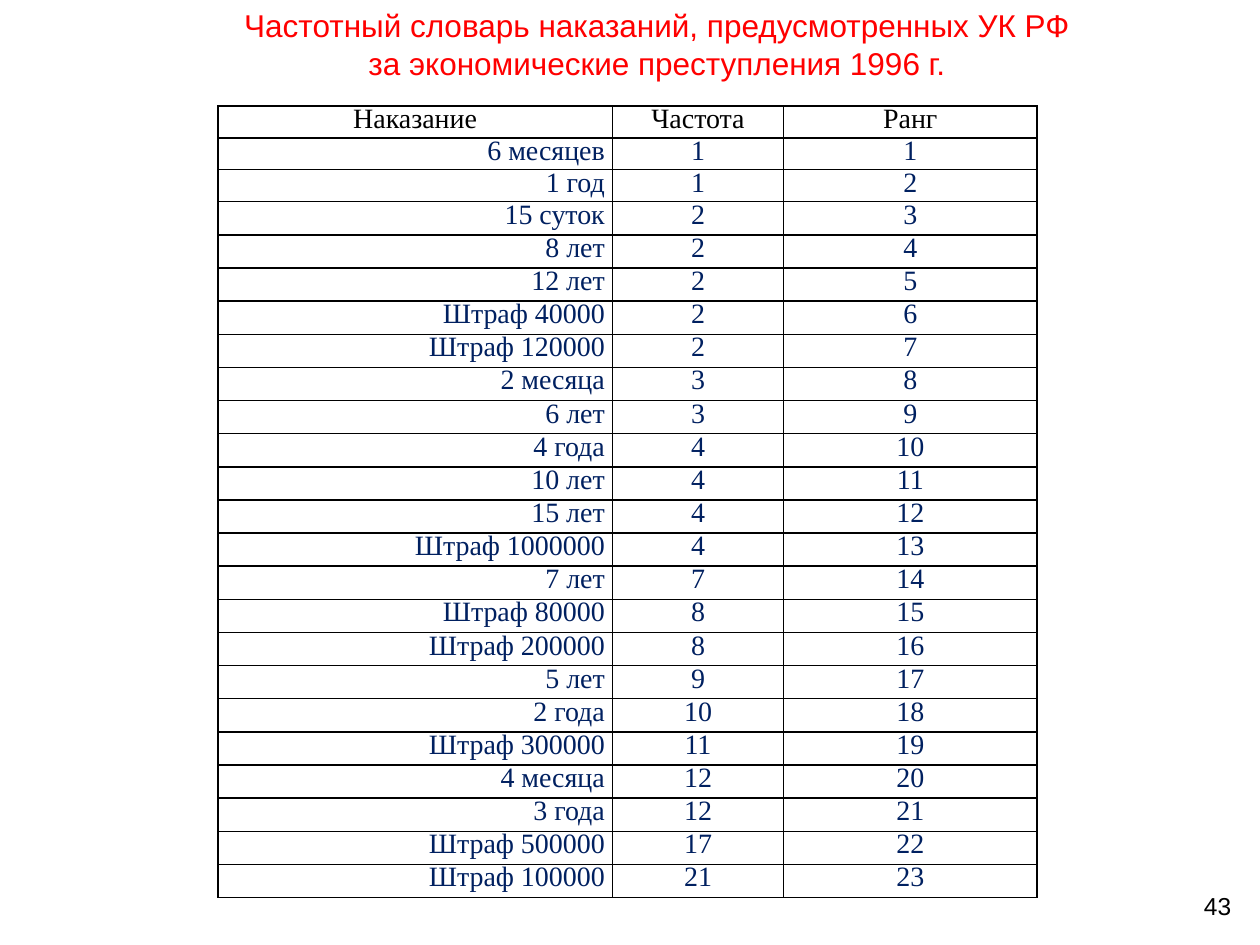
from lxml import etree
from pptx import Presentation
from pptx.dml.color import RGBColor
from pptx.enum.text import MSO_ANCHOR, MSO_AUTO_SIZE, PP_ALIGN
from pptx.oxml.ns import qn
from pptx.util import Pt

PX = 9144  # 100 px to the inch
CENTER, RIGHT = PP_ALIGN.CENTER, PP_ALIGN.RIGHT
TOP, MIDDLE = MSO_ANCHOR.TOP, MSO_ANCHOR.MIDDLE
GROW = MSO_AUTO_SIZE.SHAPE_TO_FIT_TEXT
BLACK, RED, NAVY = "000000", "FF0000", "002060"

TITLE = ("Частотный словарь наказаний, предусмотренных УК РФ\n"
         "за экономические преступления 1996 г.")
HEADERS = ("Наказание", "Частота", "Ранг")
# Punishment and frequency; the rank is the position in the list
FREQUENCIES = [
    ("6 месяцев", 1), ("1 год", 1), ("15 суток", 2), ("8 лет", 2),
    ("12 лет", 2), ("Штраф 40000", 2), ("Штраф 120000", 2),
    ("2 месяца", 3), ("6 лет", 3), ("4 года", 4), ("10 лет", 4),
    ("15 лет", 4), ("Штраф 1000000", 4), ("7 лет", 7),
    ("Штраф 80000", 8), ("Штраф 200000", 8), ("5 лет", 9),
    ("2 года", 10), ("Штраф 300000", 11), ("4 месяца", 12),
    ("3 года", 12), ("Штраф 500000", 17), ("Штраф 100000", 21),
]


def color(value):
    return RGBColor.from_string(value)


def emu(box):
    return [v * PX for v in box]


def style(p, align, size, font, value):
    p.alignment = align
    for r in p.runs:
        r.font.size = Pt(size)
        r.font.name = font
        r.font.color.rgb = color(value)


def add_title(s, box):
    sp = s.shapes.title
    sp.left, sp.top, sp.width, sp.height = emu(box)
    tf = sp.text_frame
    tf.text = TITLE
    tf.word_wrap = True
    tf.auto_size = GROW
    tf.vertical_anchor = MIDDLE
    for p in tf.paragraphs:
        style(p, CENTER, 18, "Arial", RED)


def add_page_number(s, box, number):
    tf = s.shapes.add_textbox(*emu(box)).text_frame
    tf.text = str(number)
    tf.word_wrap = True
    tf.vertical_anchor = MIDDLE
    style(tf.paragraphs[0], RIGHT, 14, "Arial", BLACK)


def set_borders(cell):
    tc_pr = cell._tc.get_or_add_tcPr()
    for side in ("a:lnL", "a:lnR", "a:lnT", "a:lnB"):
        ln = etree.SubElement(tc_pr, qn(side), w=str(Pt(1)))
        fill = etree.SubElement(ln, qn("a:solidFill"))
        etree.SubElement(fill, qn("a:srgbClr"), val=BLACK)


def fill_cell(cell, text, align, value):
    set_borders(cell)
    cell.fill.background()
    cell.margin_left = cell.margin_right = 6 * PX
    cell.margin_top, cell.margin_bottom = 8 * PX, 4 * PX
    cell.vertical_anchor = TOP
    cell.text = str(text)
    p = cell.text_frame.paragraphs[0]
    # Hanging indent
    p_pr = p._p.get_or_add_pPr()
    p_pr.set("marL", str(38 * PX))
    p_pr.set("indent", str(-38 * PX))
    p.line_spacing = 0.5
    style(p, align, 16, "Times New Roman", value)


def add_frequency_table(s, box):
    rows = [HEADERS] + [(name, count, rank) for rank, (name, count)
                        in enumerate(FREQUENCIES, 1)]
    table = s.shapes.add_table(len(rows), len(HEADERS), *emu(box)).table
    table.first_row = table.horz_banding = False
    for column, width in zip(table.columns, (313, 136, 201)):
        column.width = width * PX
    # Three tighter rows on top, the others share the remaining height
    tight, tight_height = 3, 25
    rest = (box[3] - tight * tight_height) * PX // (len(rows) - tight)
    for i, row in enumerate(rows):
        table.rows[i].height = tight_height * PX if i < tight else rest
        for j, text in enumerate(row):
            align = RIGHT if i and j == 0 else CENTER
            fill_cell(table.cell(i, j), text, align, NAVY if i else BLACK)


def main():
    prs = Presentation()
    prs.slide_width, prs.slide_height = 1000 * PX, 750 * PX
    s = prs.slides.add_slide(prs.slide_layouts[5])
    add_page_number(s, (717, 702, 270, 33), 43)
    add_title(s, (43, 0, 957, 70))
    add_frequency_table(s, (173, 84, 650, 628))
    prs.save("out.pptx")


if __name__ == "__main__":
    main()
